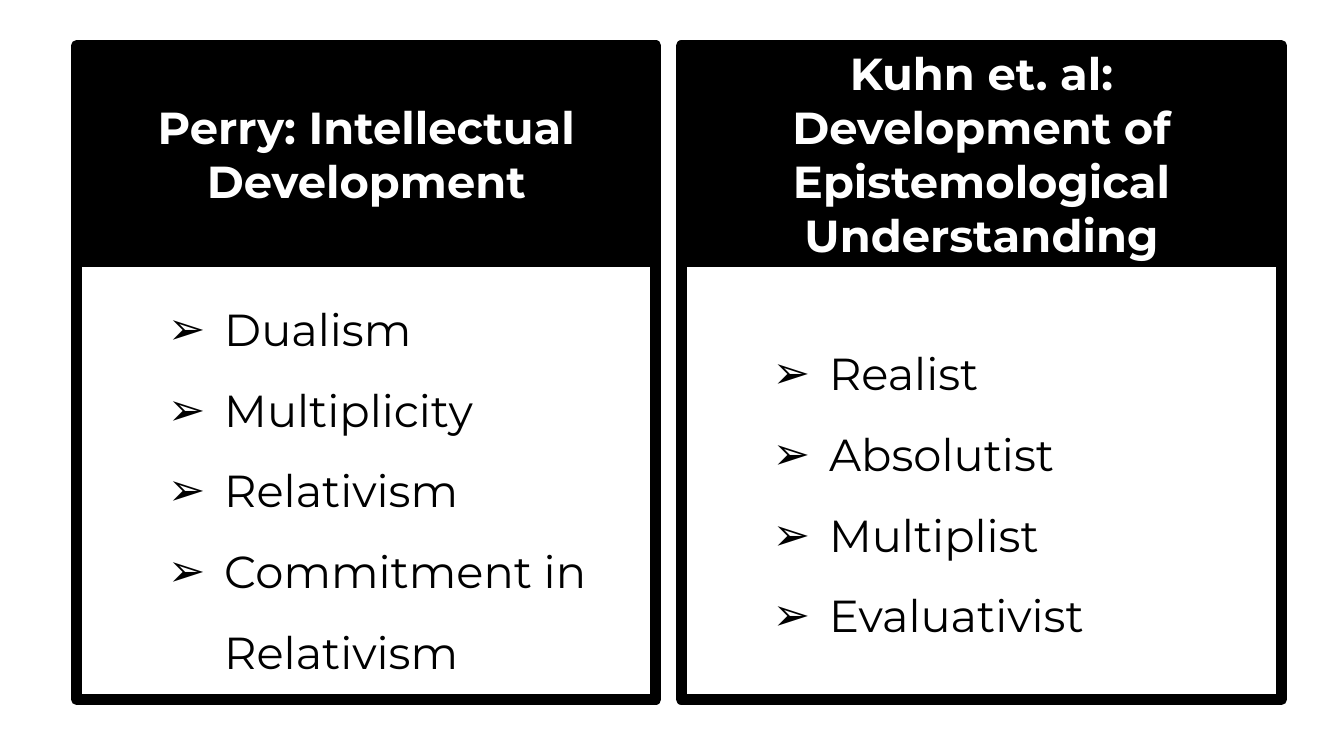
from lxml import etree
from pptx import Presentation
from pptx import util as u
from pptx.dml.color import RGBColor
from pptx.enum import shapes, text
from pptx.oxml.ns import qn

PX = 4572
COLORS = {"ink": "000000", "paper": "FFFFFF"}
HEADER_TOP, HEADER_HEIGHT = 68, 321
LIST_TOP, LIST_HEIGHT = 389, 652
LEFT_COLUMN, RIGHT_COLUMN = (114, 862), (1014, 893)
TOP, MIDDLE = text.MSO_ANCHOR.TOP, text.MSO_ANCHOR.MIDDLE

panels = [
    ("header", LEFT_COLUMN, MIDDLE, ["Perry: Intellectual Development"]),
    ("list", LEFT_COLUMN, TOP, ["Dualism", "Multiplicity", "Relativism", "Commitment in Relativism"]),
    ("list", RIGHT_COLUMN, MIDDLE, ["Realist", "Absolutist", "Multiplist", "Evaluativist"]),
    ("header", RIGHT_COLUMN, MIDDLE, ["Kuhn et. al: Development of Epistemological Understanding"]),
]


def add_bullet(para):
    props = para._p.get_or_add_pPr()
    props.set("marL", str(200 * PX))
    props.set("indent", str(-84 * PX))
    bullet_color = etree.SubElement(props, qn("a:buClr"))
    etree.SubElement(bullet_color, qn("a:srgbClr"), val=COLORS["ink"])
    etree.SubElement(props, qn("a:buFont"), typeface="Montserrat")
    etree.SubElement(props, qn("a:buChar"), char="➢")


deck = Presentation()
deck.slide_width = 2000 * PX
deck.slide_height = 1125 * PX
page = deck.slides.add_slide(deck.slide_layouts[6])

for kind, (left, width), anchor, lines in panels:
    is_header = kind == "header"
    top, height = (HEADER_TOP, HEADER_HEIGHT) if is_header else (LIST_TOP, LIST_HEIGHT)
    box = page.shapes.add_shape(
        shapes.MSO_SHAPE.RECTANGLE, left * PX, top * PX, width * PX, height * PX)
    box.shadow.inherit = False
    if is_header:
        box.fill.solid()
        box.fill.fore_color.rgb = RGBColor.from_string(COLORS["ink"])
    else:
        box.fill.background()
    box.line.color.rgb = RGBColor.from_string(COLORS["ink"])
    box.line.width = u.Pt(6)
    etree.SubElement(box.line._get_or_add_ln(), qn("a:round"))

    frame = box.text_frame
    frame.word_wrap = True
    frame.vertical_anchor = anchor
    frame.margin_left = frame.margin_right = frame.margin_top = frame.margin_bottom = 20 * PX
    frame.text = "\n".join(lines)
    for para in frame.paragraphs:
        if is_header:
            para.alignment = text.PP_ALIGN.CENTER
        else:
            para.alignment = text.PP_ALIGN.LEFT
            para.line_spacing = 1.5
            add_bullet(para)
        for span in para.runs:
            span.font.name = "Montserrat"
            span.font.size = u.Pt(24)
            span.font.bold = is_header
            span.font.color.rgb = RGBColor.from_string(COLORS["paper" if is_header else "ink"])

deck.save("out.pptx")
